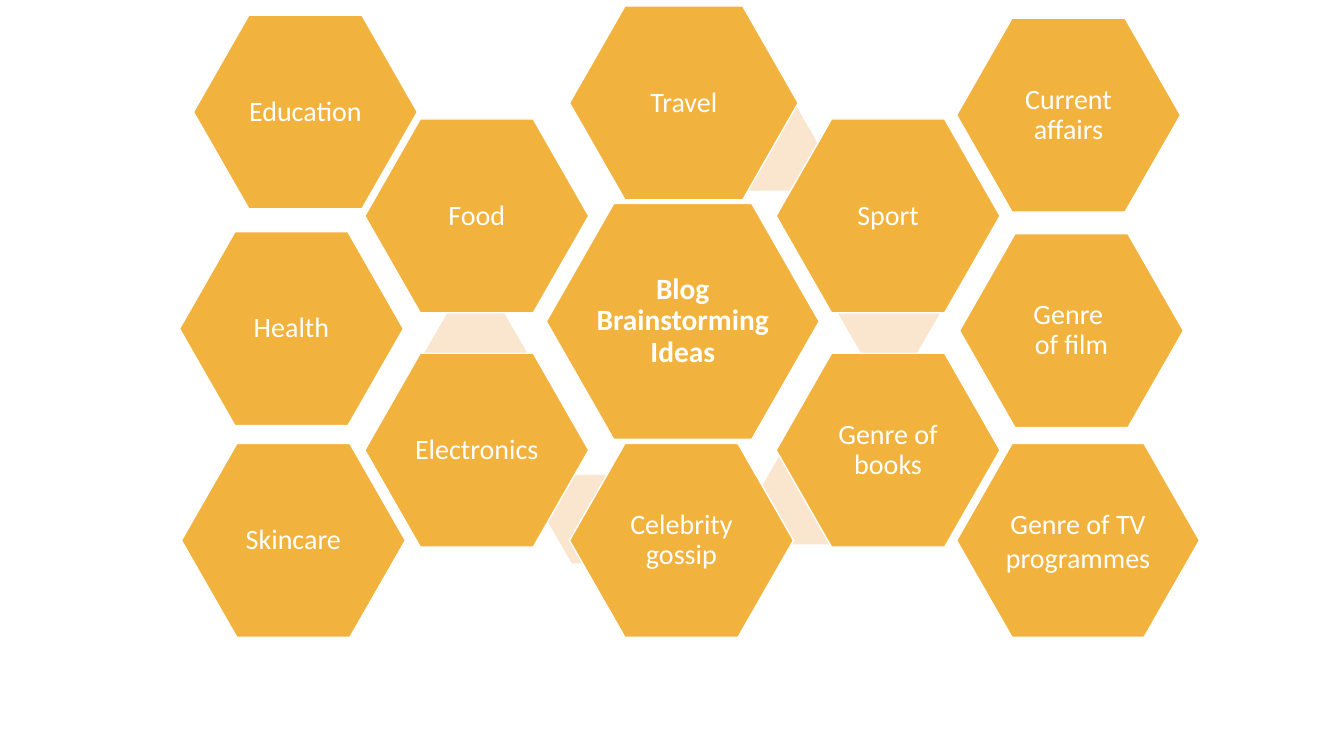
from pptx import Presentation
from pptx.dml.color import RGBColor as RGB
from pptx.enum.shapes import MSO_SHAPE as Shape
from pptx.enum.text import MSO_ANCHOR as Anchor, PP_ALIGN as Align
from pptx.util import Pt

GOLD = RGB(0xF2, 0xB3, 0x3E)
CREAM = RGB(0xFA, 0xE5, 0xCE)
WHITE = RGB(0xFF, 0xFF, 0xFF)

CELL = (160, 138.5)
LINK = (73.4, 63.4)
HUB = (390.2, 145.4, 195, 168.5)
LEFT, MID, RIGHT, EDGE = 260.6, 406.8, 554.4, 683.3
UPPER, LOWER, BASE = 85, 252.3, 316.8

LINKS = [(511.9, 72.7), (598.3, 191.5), (538.6, 325.4),
         (390.2, 339.1), (303.1, 220.3)]
IDEAS = [
    ("Travel", MID, 4.3, 3.4),
    ("Sport", RIGHT, UPPER, 0),
    ("Genre of books", RIGHT, LOWER, 0),
    ("Celebrity gossip", MID, BASE, 0),
    ("Electronics", LEFT, LOWER, 0),
    ("Food", LEFT, UPPER, 0),
    ("Health", 128.2, 165.6, 0),
    ("Current affairs", EDGE, 13, 0),
    ("Skincare", 129.6, BASE, 0),
    ("Genre \vof film", 685.4, 167, 0),
    ("Education", 138.2, 10.8, 0),
    ("Genre of TV programmes", EDGE, BASE, 13.5),
]


def apply(item, style):
    """Set each attribute in style on item."""
    for key, value in style.items():
        setattr(item, key, value)


def add_hex(slide, box, fill, bend):
    """Add a plain hexagon that fills the box."""
    tile = slide.shapes.add_shape(Shape.HEXAGON, *map(Pt, box))
    tile.adjustments[0] = bend
    tile.shadow.inherit = False
    tile.fill.solid()
    tile.fill.fore_color.rgb = fill
    tile.line.fill.background()
    return tile


def add_cell(slide, box, text, size=20, bold=False, lead=0.9):
    """Add a gold hexagon with a white edge and a centred label."""
    tile = add_hex(slide, box, GOLD, 0.286)
    tile.line.color.rgb = WHITE
    tile.line.width = Pt(1)
    frame = tile.text_frame
    inset = Pt(1.5)
    apply(frame, {"word_wrap": True, "vertical_anchor": Anchor.MIDDLE,
                  "margin_left": inset, "margin_right": inset,
                  "margin_top": inset, "margin_bottom": inset})
    line = frame.paragraphs[0]
    line.text = text
    apply(line, {"alignment": Align.CENTER, "line_spacing": lead})
    for run in line.runs:
        apply(run.font, {"name": "Calibri", "size": Pt(size), "bold": bold})
        run.font.color.rgb = WHITE


def add_comb(slide):
    """Place the links, the hub and the ideas around it."""
    for spot in LINKS:
        add_hex(slide, spot + LINK, CREAM, 0.289)
    add_cell(slide, HUB, "Blog Brainstorming Ideas", 21, True)
    wide, high = CELL
    for text, left, top, extra in IDEAS:
        lead = 1.0 if "TV" in text else 0.9
        add_cell(slide, (left, top, wide + extra, high), text, lead=lead)


def main():
    """Build the slide and save it."""
    deck = Presentation()
    apply(deck, {"slide_width": Pt(960), "slide_height": Pt(540)})
    add_comb(deck.slides.add_slide(deck.slide_layouts[6]))
    deck.save("out.pptx")


if __name__ == "__main__":
    main()
